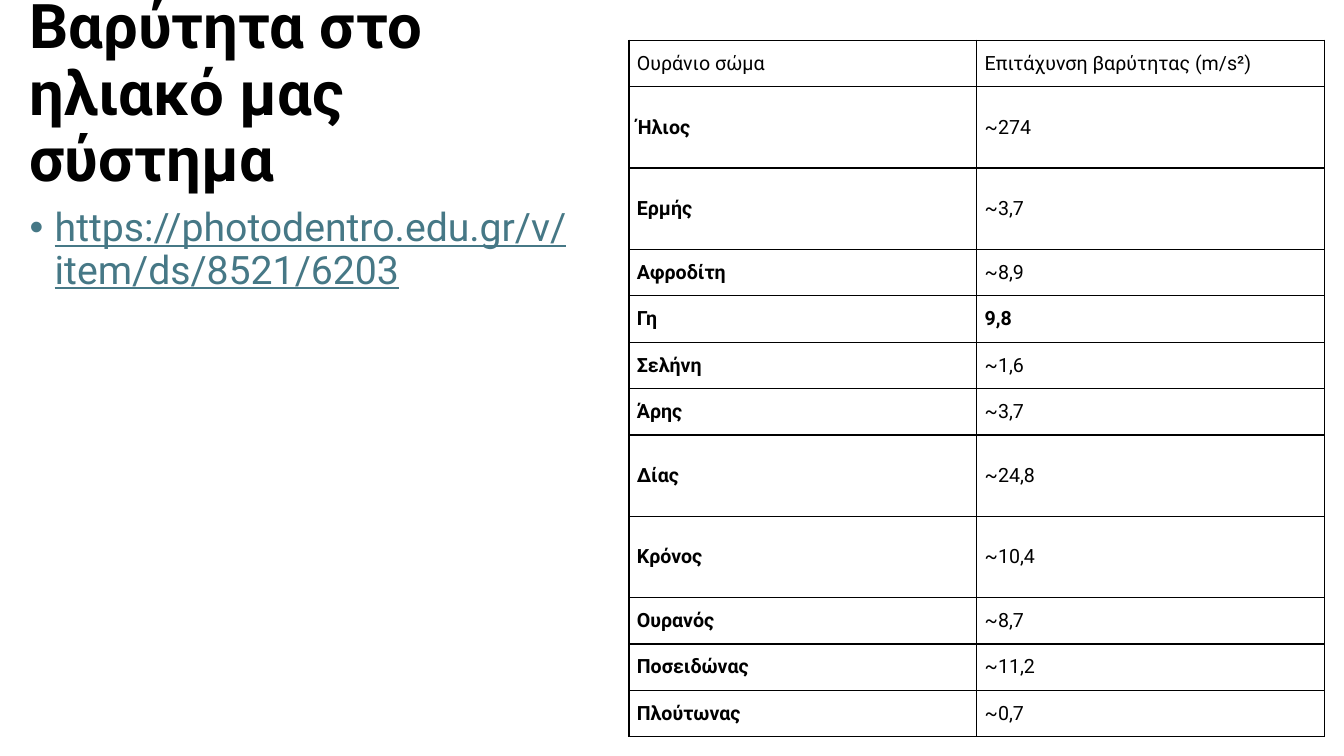
from lxml import etree
from pptx import Presentation
from pptx.dml.color import RGBColor
from pptx.enum.text import MSO_ANCHOR
from pptx.oxml.ns import qn
from pptx.util import Pt

MIDDLE, TOP = MSO_ANCHOR.MIDDLE, MSO_ANCHOR.TOP
FONT = "Roboto"
COLORS = {"ink": "000000", "link": "467886"}


def add_run(para, text, size, color="ink", bold=False):
    run = para.add_run()
    run.text = text
    run.font.name = FONT
    run.font.size = Pt(size)
    run.font.bold = bold
    run.font.color.rgb = RGBColor.from_string(COLORS[color])
    return run


def add_box(left, top, width, height, anchor):
    """Add a wrapping text box and return its first paragraph."""
    frame = slide.shapes.add_textbox(
        Pt(left), Pt(top), Pt(width), Pt(height)).text_frame
    frame.word_wrap = True
    frame.vertical_anchor = anchor
    para = frame.paragraphs[0]
    para.line_spacing = 0.9
    return para


deck = Presentation()
deck.slide_width, deck.slide_height = Pt(960), Pt(540)
slide = deck.slides.add_slide(deck.slide_layouts[6])

# Title
title = add_box(14, 16, 395, 104, MIDDLE)
add_run(title, "Βαρύτητα στο ηλιακό μας σύστημα", 44, bold=True)

# Bulleted link
item = add_box(14, 145, 414, 343, TOP)
props = item._p.get_or_add_pPr()
props.set("marL", str(Pt(18)))
props.set("indent", str(-Pt(18)))
etree.SubElement(props, qn("a:buFont")).set("typeface", "Arial")
etree.SubElement(props, qn("a:buChar")).set("char", "•")
link = add_run(item, "https://photodentro.edu.gr/v/item/ds/8521/6203", 28, "link")
link.font.underline = True

# Gravity table
LOW, HIGH = 33.14, 58.1
rows = [
    ("Ουράνιο σώμα", "Επιτάχυνση βαρύτητας (m/s²)", LOW),
    ("Ήλιος", "~274", HIGH),
    ("Ερμής", "~3,7", HIGH),
    ("Αφροδίτη", "~8,9", LOW),
    ("Γη", "9,8", LOW),
    ("Σελήνη", "~1,6", LOW),
    ("Άρης", "~3,7", LOW),
    ("Δίας", "~24,8", HIGH),
    ("Κρόνος", "~10,4", HIGH),
    ("Ουρανός", "~8,7", LOW),
    ("Ποσειδώνας", "~11,2", LOW),
    ("Πλούτωνας", "~0,7", LOW),
]
total = sum(row[2] for row in rows)
table = slide.shapes.add_table(
    len(rows), 2, Pt(449.3), Pt(28.8), Pt(497), Pt(total)).table
table.first_row = table.horz_banding = False
for col in table.columns:
    col.width = Pt(248.5)

for r, (body, pull, height) in enumerate(rows):
    table.rows[r].height = Pt(height)
    for c, text in enumerate((body, pull)):
        cell = table.cell(r, c)
        cell.vertical_anchor = MIDDLE
        cell.margin_left = cell.margin_right = Pt(5.6)
        cell.margin_top = cell.margin_bottom = Pt(2.8)
        bold = r > 0 and (c == 0 or body == "Γη")
        add_run(cell.text_frame.paragraphs[0], text, 14, bold=bold)
        props = cell._tc.get_or_add_tcPr()
        for side in ("a:lnL", "a:lnR", "a:lnT", "a:lnB"):
            line = etree.SubElement(props, qn(side), w=str(Pt(1)))
            fill = etree.SubElement(line, qn("a:solidFill"))
            etree.SubElement(fill, qn("a:srgbClr"), val=COLORS["ink"])
        cell.fill.background()

deck.save("out.pptx")
